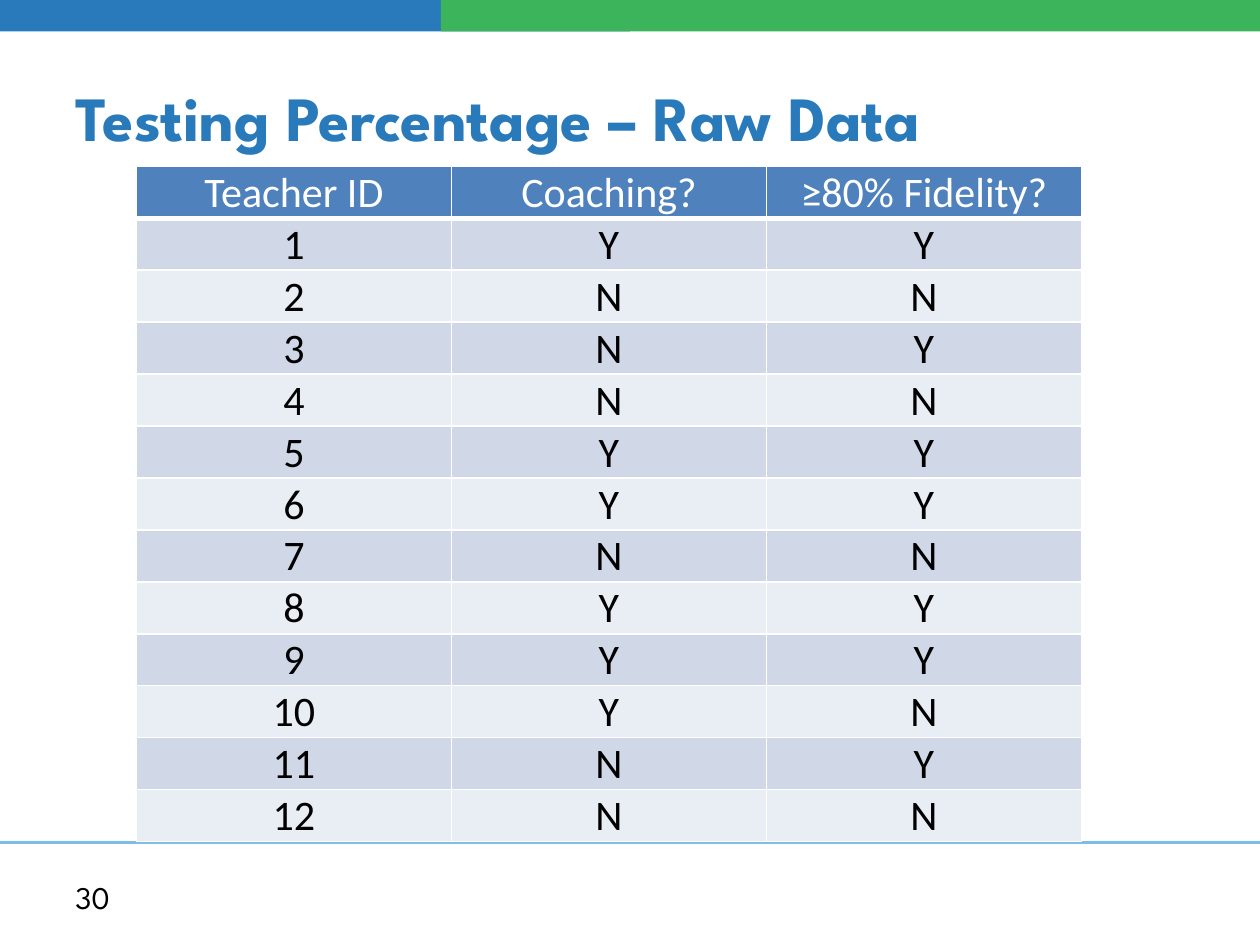
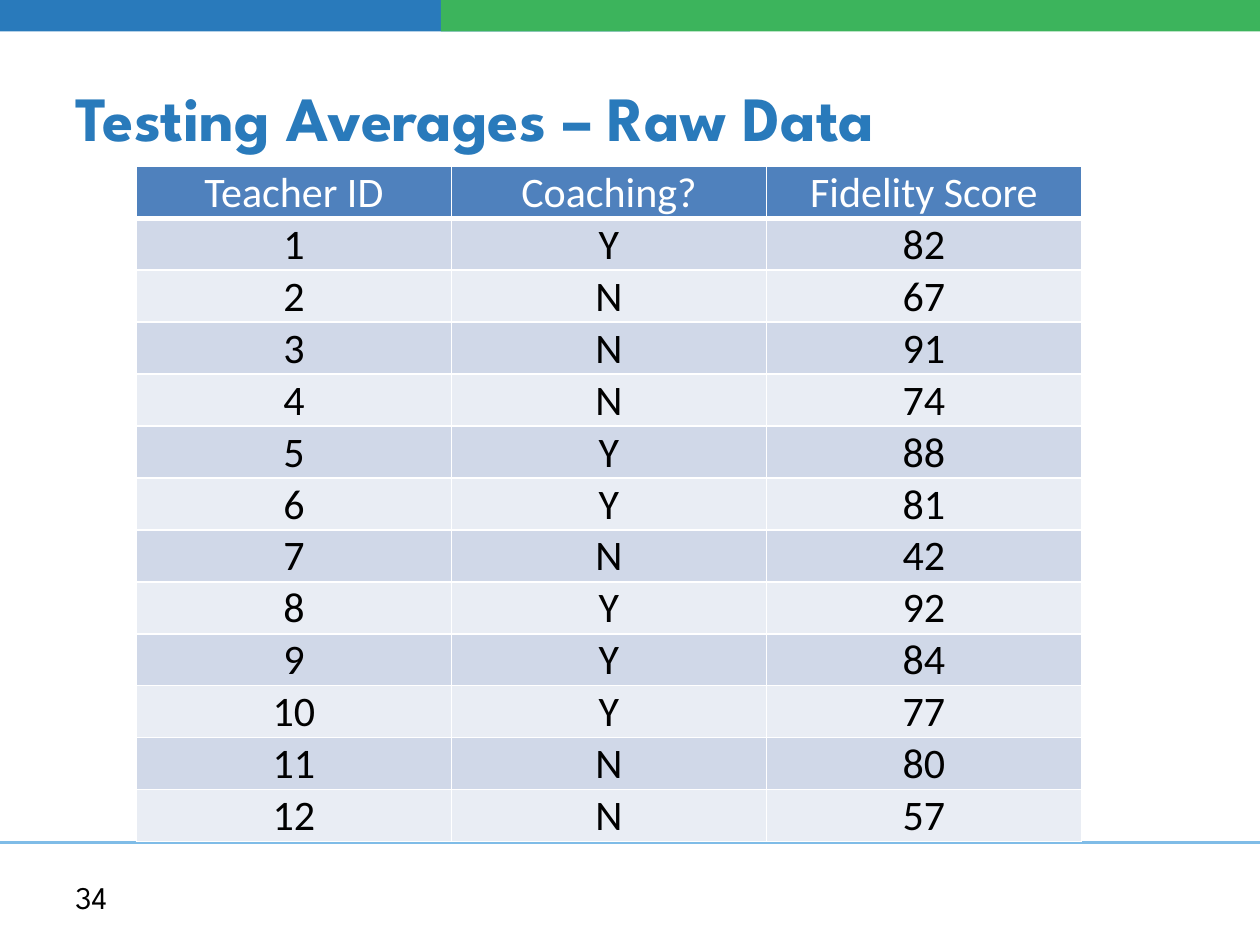
from dataclasses import dataclass
from pptx import Presentation
from pptx.dml.color import RGBColor as Rgb
from pptx.enum.shapes import MSO_CONNECTOR as Link, MSO_SHAPE as Form
from pptx.enum.text import MSO_ANCHOR as Anchor, MSO_AUTO_SIZE as Fit, PP_ALIGN as Align
from pptx.oxml.ns import qn
from pptx.util import Inches, Pt
from lxml.etree import SubElement as sub

WIDE, HIGH = 10, 7.5


@dataclass(frozen=True)
class Theme:
    """Colours, fonts and type sizes of the deck."""
    blue: str = "297ABB"
    green: str = "3CB45C"
    rule: str = "7FBCE7"
    head: str = "4F81BD"
    bands: tuple = ("D0D8E8", "E9EDF4")
    white: str = "FFFFFF"
    black: str = "000000"
    brand: str = "League Spartan"
    plain: str = "Calibri"
    title: int = 36
    cell: int = 24
    page: int = 18


@dataclass(frozen=True)
class Box:
    """A region in percent of the slide."""
    left: float
    top: float
    width: float
    height: float

    def emu(self):
        """Return left, top, width and height as lengths."""
        return (Inches(self.left * WIDE / 100), Inches(self.top * HIGH / 100),
                Inches(self.width * WIDE / 100), Inches(self.height * HIGH / 100))


LOOK = Theme()
BAND = Box(0, -16.67, 100, 20)
TITLE = Box(5, 4, 90, 16.67)
GRID = Box(10.83, 17.6, 75, 71.5)
RULE = Box(0, 89.2, 100, 0)
PAGE = Box(5, 92.27, 23.3, 5.33)

COACH = "YNNNYYNYYYNN"
DECK = (
    ("Testing Percentage – Raw Data", "30", "≥80% Fidelity?", "YNYNYYNYYNYN"),
    ("Testing Averages – Raw Data", "34", "Fidelity Score",
     (82, 67, 91, 74, 88, 81, 42, 92, 84, 77, 80, 57)),
)


def write(frame, text, size, font, color, bold=False, align=Align.LEFT):
    """Put one styled line of text in a frame."""
    frame.text = text
    line = frame.paragraphs[0]
    line.alignment = align
    for run in line.runs:
        run.font.size, run.font.name, run.font.bold = Pt(size), font, bold
        run.font.color.rgb = Rgb.from_string(color)


def paint(fill, color):
    """Give a fill one solid colour."""
    fill.solid()
    fill.fore_color.rgb = Rgb.from_string(color)


def add_band(slide, box):
    """Draw the two overlapping bars of the band in the box."""
    for color, start, share in ((LOOK.blue, 0, 0.5), (LOOK.green, 0.35, 0.65)):
        part = Box(box.left + box.width * start, box.top, box.width * share, box.height)
        bar = slide.shapes.add_shape(Form.RECTANGLE, *part.emu())
        bar.shadow.inherit = False
        bar.line.fill.background()
        paint(bar.fill, color)


def add_rule(slide, box):
    """Draw the footer line along the top of the box."""
    left, top, width, _ = box.emu()
    rule = slide.shapes.add_connector(Link.STRAIGHT, left, top, left + width, top)
    rule.line.width = Pt(1.75)
    rule.line.color.rgb = Rgb.from_string(LOOK.rule)
    sub(rule._element.spPr, qn("a:effectLst"))


def add_title(slide, box, text):
    """Move the title placeholder to the box and style it."""
    title = slide.shapes.title
    title.left, title.top, title.width, title.height = box.emu()
    frame = title.text_frame
    frame.auto_size = Fit.NONE
    frame.vertical_anchor = Anchor.MIDDLE
    write(frame, text, LOOK.title, LOOK.brand, LOOK.blue, bold=True)


def add_page(slide, box, text):
    """Write the page number in the box."""
    frame = slide.shapes.add_textbox(*box.emu()).text_frame
    frame.word_wrap = True
    frame.vertical_anchor = Anchor.MIDDLE
    write(frame, text, LOOK.page, LOOK.brand, LOOK.black)


def edge(cell, **widths):
    """Draw white cell borders with the given point widths."""
    props = cell._tc.get_or_add_tcPr()
    for side in "LRTB":
        line = sub(props, qn(f"a:ln{side}"), w=str(Pt(widths.get(side, 1))))
        sub(sub(line, qn("a:solidFill")), qn("a:srgbClr"), val=LOOK.white)


def add_grid(slide, box, rows):
    """Fill the box with a table with a head row and banded rows."""
    table = slide.shapes.add_table(len(rows), len(rows[0]), *box.emu()).table
    table.horz_banding = False
    for r, row in enumerate(rows):
        for c, text in enumerate(row):
            cell = table.cell(r, c)
            cell.margin_left = cell.margin_right = cell.margin_top = Inches(0.01)
            cell.margin_bottom = 0
            cell.vertical_anchor = Anchor.BOTTOM
            edge(cell, T=3 if r == 1 else 1, B=1 if r else 3)
            paint(cell.fill, LOOK.bands[(r - 1) % 2] if r else LOOK.head)
            write(cell.text_frame, str(text), LOOK.cell, LOOK.plain,
                  LOOK.black if r else LOOK.white, align=Align.CENTER)


def add_slide(deck, title, page, head, marks):
    """Build one raw data slide."""
    slide = deck.slides.add_slide(deck.slide_layouts.get_by_name("Title Only"))
    add_band(slide, BAND)
    add_rule(slide, RULE)
    add_page(slide, PAGE, page)
    add_title(slide, TITLE, title)
    rows = [("Teacher ID", "Coaching?", head)]
    rows += zip(range(1, len(COACH) + 1), COACH, marks)
    add_grid(slide, GRID, rows)


def main():
    """Build and save the deck."""
    deck = Presentation()
    deck.slide_width, deck.slide_height = Inches(WIDE), Inches(HIGH)
    for item in DECK:
        add_slide(deck, *item)
    deck.save("out.pptx")


if __name__ == "__main__":
    main()
